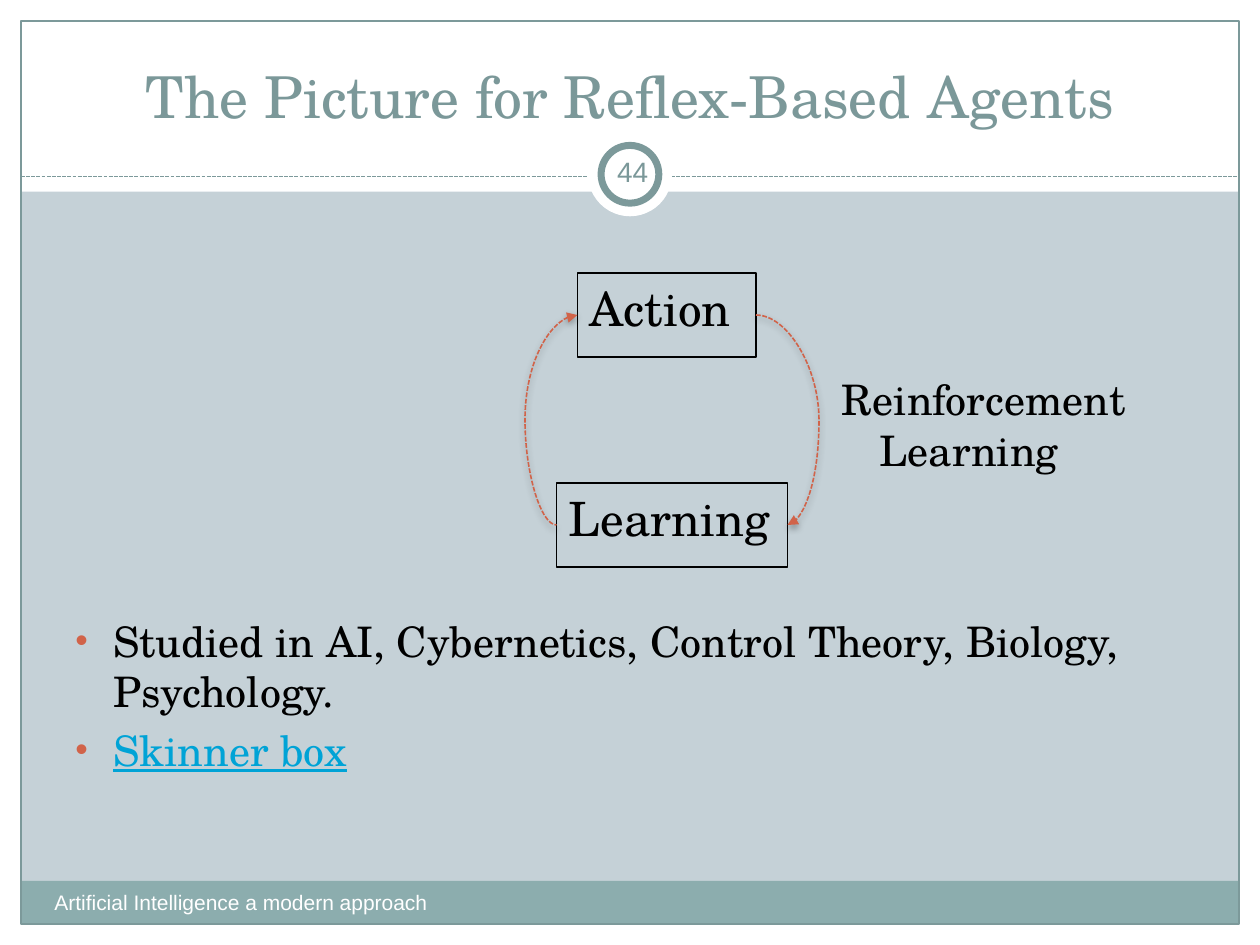
"""Build the reflex-based agents slide on a grid of 120 columns by 90 rows."""
from lxml import etree
from pptx import Presentation
from pptx.dml.color import RGBColor
from pptx.enum.dml import MSO_LINE
from pptx.enum.shapes import MSO_CONNECTOR as CONNECTOR, MSO_SHAPE as SHAPE
from pptx.enum.text import MSO_ANCHOR as ANCHOR, PP_ALIGN as ALIGN
from pptx.oxml import parse_xml
from pptx.oxml.ns import nsdecls, qn
from pptx.util import Inches, Pt

SERIF, SANS = "TeX Gyre Schola", "Arial"
WHITE, BLACK, TEAL, ACCENT = "FFFFFF", "000000", "7B9899", "D16349"
FRAME = "7C999A"
hex_color = RGBColor.from_string

presentation = Presentation()
presentation.slide_width, presentation.slide_height = Inches(10), Inches(7.5)
unit = presentation.slide_width / 120
slide = presentation.slides.add_slide(presentation.slide_layouts[6])
slide.background.fill.solid()
slide.background.fill.fore_color.rgb = hex_color("C5D1D7")


def add_panel(preset, box, fill=None, line=None, width=0.75):
    """Add a preset shape at a grid box of left, top, width and height."""
    shape = slide.shapes.add_shape(preset, *[int(n * unit) for n in box])
    shape.shadow.inherit = False
    if fill:
        shape.fill.solid()
        shape.fill.fore_color.rgb = hex_color(fill)
    else:
        shape.fill.background()
    if line:
        shape.line.color.rgb = hex_color(line)
        shape.line.width = Pt(width)
    else:
        shape.line.fill.background()
    return shape


def add_text(box, text, size, font, color, align=ALIGN.LEFT, anchor=ANCHOR.TOP, hanging=False):
    """Add a wrapped text box at a grid box, with hanging indents on request."""
    shape = slide.shapes.add_textbox(*[int(n * unit) for n in box])
    frame = shape.text_frame
    frame.text = text
    frame.word_wrap = True
    frame.vertical_anchor = anchor
    for paragraph in frame.paragraphs:
        paragraph.alignment = align
        for run in paragraph.runs:
            run.font.size, run.font.name = Pt(size), font
            run.font.color.rgb = hex_color(color)
        if hanging:
            paragraph.space_before = Pt(size * 0.2)
            properties = paragraph._p.get_or_add_pPr()
            properties.set("marL", str(Inches(0.3)))
            properties.set("indent", str(-Inches(0.3)))
    return shape


for box, fill in [
    ((0, 88, 120, 2), WHITE),
    ((0, 0, 120, 18.25), WHITE),
    ((0, 0, 2, 90), WHITE),
    ((118, 0, 2, 90), WHITE),
    ((2, 83.9, 116, 4.1), "8CADAE"),
]:
    add_panel(SHAPE.RECTANGLE, box, fill)
add_panel(SHAPE.RECTANGLE, (2, 2, 116, 86), line=FRAME)

divider = slide.shapes.add_connector(
    CONNECTOR.STRAIGHT, *[int(n * unit) for n in (2, 16.8, 118, 16.8)])
divider.line.color.rgb = hex_color(FRAME)
divider.line.width = Pt(0.75)
divider.line.dash_style = MSO_LINE.SQUARE_DOT
etree.SubElement(divider._element.spPr, qn("a:effectLst"))

add_panel(SHAPE.OVAL, (56, 12.6, 8, 8), WHITE)
add_panel(SHAPE.OVAL, (57.25, 13.85, 5.5, 5.5), WHITE, FRAME, 4)

add_text((4, 3, 112, 10), "The Picture for Reflex-Based Agents", 33, SERIF, TEAL,
         ALIGN.CENTER, ANCHOR.BOTTOM)
add_text((4, 84.1, 47, 4.8), "Artificial Intelligence a modern approach", 12, SANS, WHITE)
number = add_text((57.25, 13.4, 6, 5.8), "44", 16, SANS, TEAL, ALIGN.CENTER, ANCHOR.MIDDLE)
number.text_frame.margin_left = number.text_frame.margin_right = Inches(0.05)

for box, name in [((55, 26, 17, 8), "Action"), ((53, 46, 22, 8), "Learning")]:
    node = add_text(box, name, 27, SERIF, BLACK, hanging=True)
    node.line.color.rgb = hex_color(BLACK)
    node.line.width = Pt(0.75)
add_text((79, 35, 34, 14), "Reinforcement Learning", 24, SERIF, BLACK, hanging=True)

for start, end, bulge, arrow_end in [(55, 53, 250000, "headEnd"), (72, 75, 200000, "tailEnd")]:
    curve = slide.shapes.add_connector(
        CONNECTOR.CURVE, *[int(n * unit) for n in (start, 30, end, 50)])
    curve.line.color.rgb = hex_color(ACCENT)
    curve.line.width = Pt(0.9)
    curve.line.dash_style = MSO_LINE.SQUARE_DOT
    properties = curve._element.spPr
    adjustments = properties.find(qn("a:prstGeom")).find(qn("a:avLst"))
    etree.SubElement(adjustments, qn("a:gd"), name="adj1", fmla=f"val {bulge}")
    etree.SubElement(properties.find(qn("a:ln")), qn(f"a:{arrow_end}"), type="triangle")
    properties.append(parse_xml(
        f'<a:effectLst {nsdecls("a")}><a:outerShdw blurRad="{Pt(4)}" dist="{Pt(2)}" '
        f'dir="5400000" rotWithShape="0"><a:srgbClr val="{BLACK}"><a:alpha val="35000"/>'
        '</a:srgbClr></a:outerShdw></a:effectLst>'))

bullets = add_text(
    (6, 58, 110, 14),
    "Studied in AI, Cybernetics, Control Theory, Biology, Psychology.\nSkinner box",
    24, SERIF, BLACK, hanging=True)
for paragraph in bullets.text_frame.paragraphs:
    properties = paragraph._p.get_or_add_pPr()
    bullet_color = etree.SubElement(properties, qn("a:buClr"))
    etree.SubElement(bullet_color, qn("a:srgbClr"), val=ACCENT)
    etree.SubElement(properties, qn("a:buSzPct"), val="85000")
    etree.SubElement(properties, qn("a:buFont"), typeface=SANS)
    etree.SubElement(properties, qn("a:buChar"), char="•")
link_font = bullets.text_frame.paragraphs[1].runs[0].font
link_font.color.rgb = hex_color("00A3D6")
link_font.underline = True

presentation.save("out.pptx")
